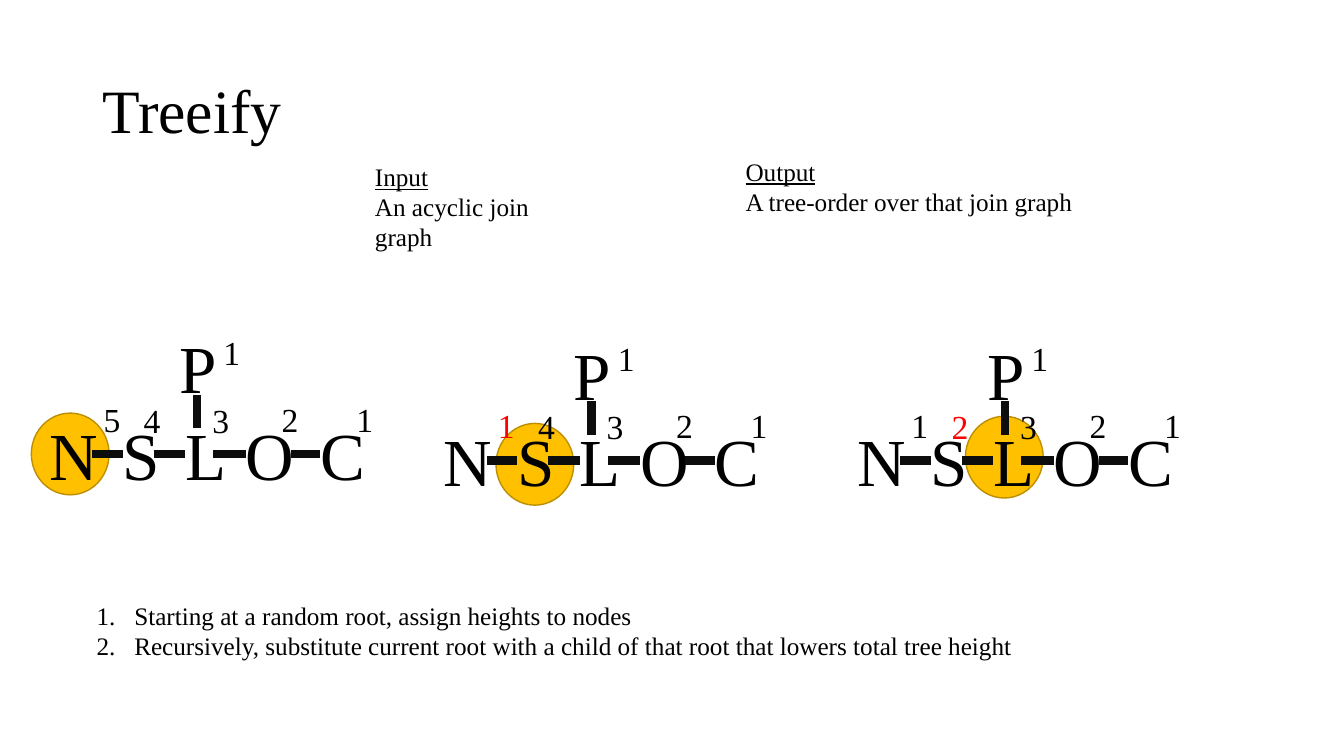
import dataclasses

import lxml.etree
import pptx
import pptx.dml.color
import pptx.enum.shapes
import pptx.enum.text
import pptx.oxml.ns
import pptx.util

Cm = pptx.util.Cm
Pt = pptx.util.Pt
Rgb = pptx.dml.color.RGBColor.from_string


@dataclasses.dataclass(frozen=True)
class Theme:
    font: str = "Times New Roman"
    ink: str = "000000"
    edge: str = "0D0D0D"
    drop: str = "FF0000"
    root: str = "FFC000"
    rim: str = "BD8E00"
    title: int = 44
    node: int = 48
    rank: int = 24
    body: int = 18


THEME = Theme()

# All lengths are in centimetres.
TITLE = "Treeify"
TITLE_BOX = (2.33, 1.02, 29.21, 3.68)
STEPS = [
    "Starting at a random root, assign heights to nodes",
    "Recursively, substitute current root with a child of that root "
    "that lowers total tree height",
]
STEPS_BOX = (2.18, 14.99, 24.1, 1.8)
NOTES = [
    (["Input", "An acyclic join graph"], (9.2, 3.94, 5.84, 1.8)),
    (["Output", "A tree-order over that join graph"], (18.54, 3.81, 8.97, 1.8)),
]

# Node: left, top and width of its letter, then left and top of its height,
# all measured from the graph's corner.
NODES = {
    "L": (3.43, 0, 0.71, 3.86, -0.46),
    "O": (4.95, 0, 1.14, 5.61, -0.48),
    "C": (6.83, 0, 0.91, 7.49, -0.48),
    "S": (1.85, 0, 0.79, 2.13, -0.46),
    "P": (3.28, -2.18, 0.89, 4.14, -2.18),
    "N": (0, 0, 1.09, 1.12, -0.48),
}
CHAIN = "NSLOC"
STEM = (3.73, -0.46, 0.38)  # x, top, bottom of the edge from P to L
NODE_TALL = 2.06
RANK_SIZE = (0.94, 1.27)
DISC_SIZE = (1.96, 2.06)

# Graph corner, root disc corner, heights, node whose height is lowered
GRAPHS = [
    ((1.24, 10.41), (0.79, 10.41), dict(N=5, S=4, L=3, O=2, C=1, P=1), ""),
    ((11.18, 10.57), (12.5, 10.67), dict(N=1, S=4, L=3, O=2, C=1, P=1), "N"),
    ((21.6, 10.57), (24.33, 10.49), dict(N=1, S=2, L=3, O=2, C=1, P=1), "S"),
]


def write(shape, lines, size, color=THEME.ink, inset=True, head=False):
    """Fill a shape with paragraphs; head underlines the first one."""
    frame = shape.text_frame
    frame.word_wrap = True
    frame.auto_size = pptx.enum.text.MSO_AUTO_SIZE.NONE
    if not inset:
        frame.margin_left = frame.margin_right = 0
        frame.margin_top = frame.margin_bottom = 0
    for i, line in enumerate(lines):
        para = frame.paragraphs[0] if i == 0 else frame.add_paragraph()
        para.alignment = pptx.enum.text.PP_ALIGN.LEFT
        para.space_before = Pt(0)
        run = para.add_run()
        run.text = line
        run.font.name = THEME.font
        run.font.size = Pt(size)
        run.font.color.rgb = Rgb(color)
        if head and i == 0:
            run.font.underline = True
    return frame


def place(shape, box):
    shape.left, shape.top, shape.width, shape.height = map(Cm, box)


def add_text(shapes, box, lines, size, **style):
    shape = shapes.add_textbox(*map(Cm, box))
    write(shape, lines, size, **style)
    return shape


def add_edge(shapes, start, end):
    kind = pptx.enum.shapes.MSO_CONNECTOR.STRAIGHT
    edge = shapes.add_connector(kind, *map(Cm, start + end))
    edge.line.color.rgb = Rgb(THEME.edge)
    edge.line.width = Pt(6)
    lxml.etree.SubElement(edge._element.spPr, pptx.oxml.ns.qn("a:effectLst"))
    return edge


def add_disc(shapes, spot):
    oval = pptx.enum.shapes.MSO_SHAPE.OVAL
    disc = shapes.add_shape(oval, *map(Cm, spot + DISC_SIZE))
    disc.shadow.inherit = False
    disc.fill.solid()
    disc.fill.fore_color.rgb = Rgb(THEME.root)
    disc.line.color.rgb = Rgb(THEME.rim)
    disc.line.width = Pt(1)


def add_graph(shapes, spot, disc, ranks, lower):
    add_disc(shapes, disc)
    x, y = spot
    group = shapes.add_group_shape().shapes
    boxes = {}
    for name, (left, top, wide, _, _) in NODES.items():
        box = (x + left, y + top, wide, NODE_TALL)
        boxes[name] = add_text(group, box, [name], THEME.node, inset=False)

    mid = y + NODE_TALL / 2
    for one, two in zip(CHAIN, CHAIN[1:]):
        start = x + NODES[one][0] + NODES[one][2]
        edge = add_edge(group, (start, mid), (x + NODES[two][0], mid))
        edge.begin_connect(boxes[one], 3)
        edge.end_connect(boxes[two], 1)
    stem, top, base = STEM
    add_edge(group, (x + stem, y + top), (x + stem, y + base))

    for name, (_, _, _, left, top) in NODES.items():
        color = THEME.drop if name == lower else THEME.ink
        box = (x + left, y + top) + RANK_SIZE
        add_text(shapes, box, [str(ranks[name])], THEME.rank, color=color)


def number(frame):
    for para in frame.paragraphs:
        props = para._p.get_or_add_pPr()
        props.set("marL", str(Cm(0.95)))
        props.set("indent", str(-Cm(0.95)))
        mark = lxml.etree.SubElement(props, pptx.oxml.ns.qn("a:buAutoNum"))
        mark.set("type", "arabicPeriod")


def main():
    deck = pptx.Presentation()
    deck.slide_width, deck.slide_height = Cm(33.87), Cm(19.05)
    slide = deck.slides.add_slide(deck.slide_layouts[1])
    title, steps = slide.placeholders

    place(title, TITLE_BOX)
    frame = write(title, [TITLE], THEME.title)
    frame.vertical_anchor = pptx.enum.text.MSO_ANCHOR.MIDDLE
    frame.paragraphs[0].line_spacing = 0.9

    place(steps, STEPS_BOX)
    number(write(steps, STEPS, THEME.body))

    for lines, box in NOTES:
        add_text(slide.shapes, box, lines, THEME.body, head=True)
    for graph in GRAPHS:
        add_graph(slide.shapes, *graph)
    deck.save("out.pptx")


if __name__ == "__main__":
    main()
